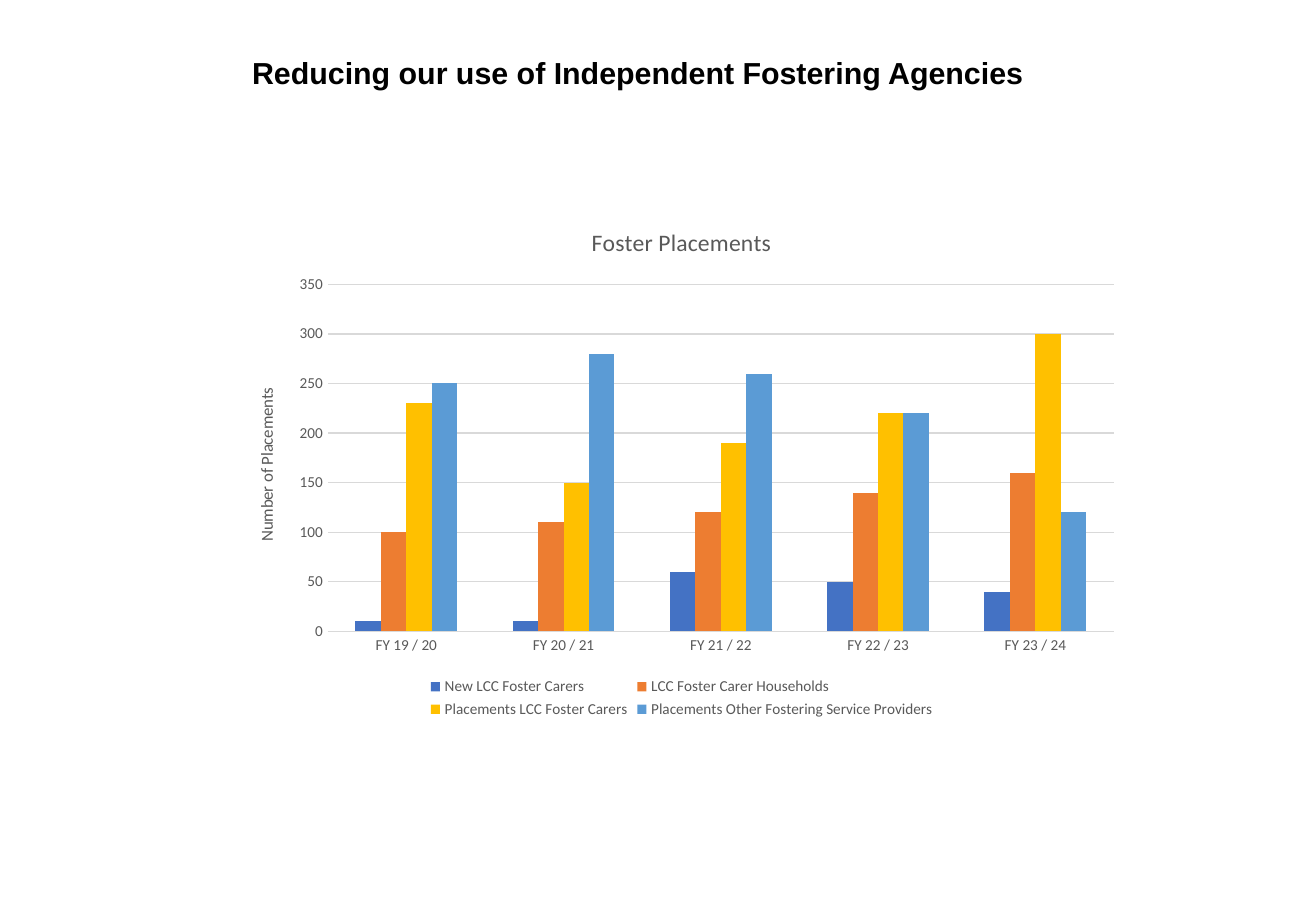
import pptx
import pptx.chart.data
import pptx.dml.color
import pptx.enum.chart
import pptx.enum.text
import pptx.util

BLACK = pptx.dml.color.RGBColor(0x00, 0x00, 0x00)
GREY = pptx.dml.color.RGBColor(0x59, 0x59, 0x59)
PALE_GREY = pptx.dml.color.RGBColor(0xD9, 0xD9, 0xD9)
BLUE = pptx.dml.color.RGBColor(0x44, 0x72, 0xC4)
ORANGE = pptx.dml.color.RGBColor(0xED, 0x7D, 0x31)
GOLD = pptx.dml.color.RGBColor(0xFF, 0xC0, 0x00)
SKY = pptx.dml.color.RGBColor(0x5B, 0x9B, 0xD5)

PX_PER_INCH = 121.5
TITLE_ONLY = 5
YEARS = ["FY 19 / 20", "FY 20 / 21", "FY 21 / 22", "FY 22 / 23", "FY 23 / 24"]
PLACEMENTS = [
    ("New LCC Foster Carers", BLUE, [10, 10, 60, 50, 40]),
    ("LCC Foster Carer Households", ORANGE, [100, 110, 120, 140, 160]),
    ("Placements LCC Foster Carers", GOLD, [230, 150, 190, 220, 300]),
    ("Placements Other Fostering Service Providers", SKY, [250, 280, 260, 220, 120]),
]


def px(length):
    return pptx.util.Emu(round(length * 914400 / PX_PER_INCH))


class SlideBuilder:
    heading_font = "Arial"
    chart_font = "Calibri"

    def __init__(self, slide):
        self.slide = slide

    def style(self, font, name, size, color, bold=False):
        font.name = name
        font.size = pptx.util.Pt(size)
        font.color.rgb = color
        font.bold = bold

    def title(self, text, left, top, width, height):
        box = self.slide.shapes.title
        box.left, box.top, box.width, box.height = map(px, (left, top, width, height))
        frame = box.text_frame
        frame.word_wrap = True
        frame.vertical_anchor = pptx.enum.text.MSO_ANCHOR.MIDDLE
        para = frame.paragraphs[0]
        para.alignment = pptx.enum.text.PP_ALIGN.CENTER
        span = para.add_run()
        span.text = text
        self.style(span.font, self.heading_font, 18, BLACK, bold=True)

    def chart_label(self, frame, text, size):
        span = frame.paragraphs[0].add_run()
        span.text = text
        self.style(span.font, self.chart_font, size, GREY)

    def rule(self, line):
        line.color.rgb = PALE_GREY
        line.width = pptx.util.Pt(0.75)

    def column_chart(self, heading, axis_heading, left, top, width, height):
        data = pptx.chart.data.CategoryChartData(number_format="0")
        data.categories = YEARS
        for name, _, values in PLACEMENTS:
            data.add_series(name, values)
        chart = self.slide.shapes.add_chart(
            pptx.enum.chart.XL_CHART_TYPE.COLUMN_CLUSTERED,
            px(left), px(top), px(width), px(height), data,
        ).chart
        self.style(chart.font, self.chart_font, 10, BLACK)
        chart.has_title = True
        chart.chart_title.include_in_layout = False
        self.chart_label(chart.chart_title.text_frame, heading, 14)

        plot = chart.plots[0]
        plot.gap_width = 219
        plot.overlap = 0
        plot.vary_by_categories = False
        for series, (_, color, _) in zip(plot.series, PLACEMENTS):
            series.format.fill.solid()
            series.format.fill.fore_color.rgb = color
            series.invert_if_negative = False

        for axis in (chart.category_axis, chart.value_axis):
            axis.major_tick_mark = pptx.enum.chart.XL_TICK_MARK.NONE
            axis.minor_tick_mark = pptx.enum.chart.XL_TICK_MARK.NONE
            self.style(axis.tick_labels.font, self.chart_font, 9, GREY)
        self.rule(chart.category_axis.format.line)

        scale = chart.value_axis
        scale.minimum_scale = 0
        scale.maximum_scale = 350
        scale.major_unit = 50
        scale.has_major_gridlines = True
        self.rule(scale.major_gridlines.format.line)
        scale.format.line.fill.background()
        scale.tick_labels.number_format = "0"
        scale.tick_labels.number_format_is_linked = False
        scale.has_title = True
        self.chart_label(scale.axis_title.text_frame, axis_heading, 10)

        chart.has_legend = True
        chart.legend.position = pptx.enum.chart.XL_LEGEND_POSITION.BOTTOM
        chart.legend.include_in_layout = False
        self.style(chart.legend.font, self.chart_font, 9, GREY)


def main():
    deck = pptx.Presentation()
    deck.slide_width = px(1316)
    deck.slide_height = px(911)
    page = SlideBuilder(deck.slides.add_slide(deck.slide_layouts[TITLE_ONLY]))
    page.title("Reducing our use of Independent Fostering Agencies", 165, 48, 946, 49)
    page.column_chart("Foster Placements", "Number of Placements", 231, 205, 901, 518)
    deck.save("out.pptx")


if __name__ == "__main__":
    main()
